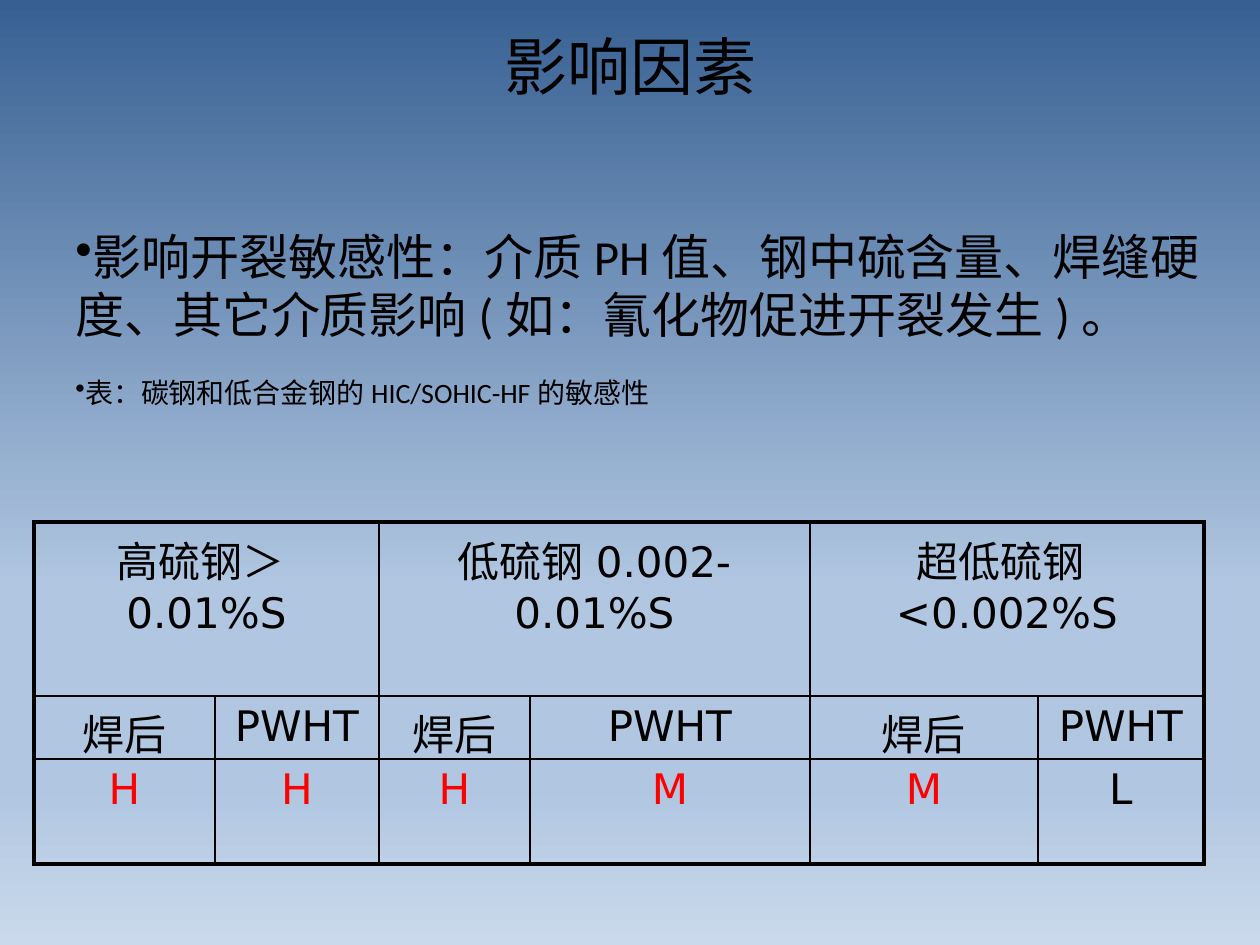
from lxml.etree import SubElement
from pptx import Presentation
from pptx.dml.color import RGBColor
from pptx.enum.text import MSO_ANCHOR, PP_ALIGN
from pptx.oxml.ns import qn
from pptx.util import Emu, Pt

EMU_PER_PX = 914400 / 126
BLACK = RGBColor(0x00, 0x00, 0x00)
RED = RGBColor(0xFF, 0x00, 0x00)
DEEP_BLUE = RGBColor(0x37, 0x60, 0x92)
SKY_BLUE = RGBColor(0xB0, 0xC6, 0xE1)
PALE_BLUE = RGBColor(0xCA, 0xD9, 0xEB)

BACKGROUND_STOPS = [(0, DEEP_BLUE), (62, SKY_BLUE), (83, SKY_BLUE), (100, PALE_BLUE)]
FACTORS = [
    ("影响开裂敏感性：介质PH值、钢中硫含量、焊缝硬度、其它介质影响(如：氰化物促进开裂发生)。", 28, 0),
    ("表：碳钢和低合金钢的HIC/SOHIC-HF的敏感性", 16, 18),
]
STEEL_GRADES = ["高硫钢＞0.01%S", "低硫钢0.002-0.01%S", "超低硫钢<0.002%S"]
CONDITIONS = ["焊后", "PWHT"]
SENSITIVITIES = ["H", "H", "H", "M", "M", "L"]
COLUMN_WIDTHS = [181, 164, 151, 280, 228, 166]
ROW_HEIGHTS = [174, 55, 105]


def px(length):
    return Emu(round(length * EMU_PER_PX))


class SlideBuilder:
    title_font = "Noto Sans CJK SC"
    body_font = "Calibri"
    table_font = "DejaVu Sans"
    thin_line = Pt(1)
    thick_line = Pt(2.25)

    def __init__(self, presentation):
        self.slide = presentation.slides.add_slide(presentation.slide_layouts[5])

    def style(self, paragraph, font_name, size, color=BLACK):
        for run in paragraph.runs:
            run.font.name = font_name
            run.font.size = Pt(size)
            run.font.color.rgb = color

    def background(self, stops):
        fill = self.slide.background.fill
        fill.gradient()
        fill.gradient_angle = 270
        stop_list = self.slide.element.find(".//" + qn("a:gsLst"))
        stop_list.clear()
        for percent, color in stops:
            stop = SubElement(stop_list, qn("a:gs"), pos=str(percent * 1000))
            SubElement(stop, qn("a:srgbClr"), val=str(color))

    def title(self, text, left, top, width, height):
        shape = self.slide.shapes.title
        shape.left, shape.top = px(left), px(top)
        shape.width, shape.height = px(width), px(height)
        text_frame = shape.text_frame
        text_frame.text = text
        text_frame.vertical_anchor = MSO_ANCHOR.MIDDLE
        paragraph = text_frame.paragraphs[0]
        paragraph.alignment = PP_ALIGN.CENTER
        self.style(paragraph, self.title_font, 36)

    def bullets(self, items, left, top, width, height):
        shape = self.slide.shapes.add_textbox(px(left), px(top), px(width), px(height))
        text_frame = shape.text_frame
        text_frame.word_wrap = True
        text_frame.text = "\n".join(text for text, size, gap in items)
        for paragraph, (text, size, gap) in zip(text_frame.paragraphs, items):
            paragraph.space_before = Pt(gap)
            SubElement(paragraph._p.get_or_add_pPr(), qn("a:buChar"), char="•")
            self.style(paragraph, self.body_font, size)

    def table(self, left, top, column_widths, row_heights):
        frame = self.slide.shapes.add_table(
            len(row_heights), len(column_widths), px(left), px(top),
            px(sum(column_widths)), px(sum(row_heights)))
        table = frame.table
        table.first_row = table.horz_banding = False
        for column, width in zip(table.columns, column_widths):
            column.width = px(width)
        for row, height in zip(table.rows, row_heights):
            row.height = px(height)
        return table

    def cell(self, table, row, column, text, span=1, color=BLACK):
        cell = table.cell(row, column)
        if span > 1:
            cell.merge(table.cell(row, column + span - 1))
        cell.text = text
        paragraph = cell.text_frame.paragraphs[0]
        paragraph.alignment = PP_ALIGN.CENTER
        self.style(paragraph, self.table_font, 24, color)
        outer_edges = {
            "a:lnL": column == 0,
            "a:lnR": column + span == len(table.columns),
            "a:lnT": row == 0,
            "a:lnB": row + 1 == len(table.rows),
        }
        properties = cell._tc.get_or_add_tcPr()
        for edge, is_outer in outer_edges.items():
            width = self.thick_line if is_outer else self.thin_line
            line = SubElement(properties, qn(edge), w=str(width))
            SubElement(SubElement(line, qn("a:solidFill")), qn("a:srgbClr"), val=str(BLACK))
        cell.fill.background()


def main():
    presentation = Presentation()
    presentation.slide_width, presentation.slide_height = px(1260), px(945)
    builder = SlideBuilder(presentation)
    builder.background(BACKGROUND_STOPS)
    builder.title("影响因素", 63, -14, 1134, 158)
    builder.bullets(FACTORS, 63, 220, 1197, 291)

    table = builder.table(34, 522, COLUMN_WIDTHS, ROW_HEIGHTS)
    for index, grade in enumerate(STEEL_GRADES):
        builder.cell(table, 0, index * 2, grade, span=2)
    for column, sensitivity in enumerate(SENSITIVITIES):
        builder.cell(table, 1, column, CONDITIONS[column % 2])
        color = BLACK if sensitivity == "L" else RED
        builder.cell(table, 2, column, sensitivity, color=color)
    presentation.save("out.pptx")


if __name__ == "__main__":
    main()
